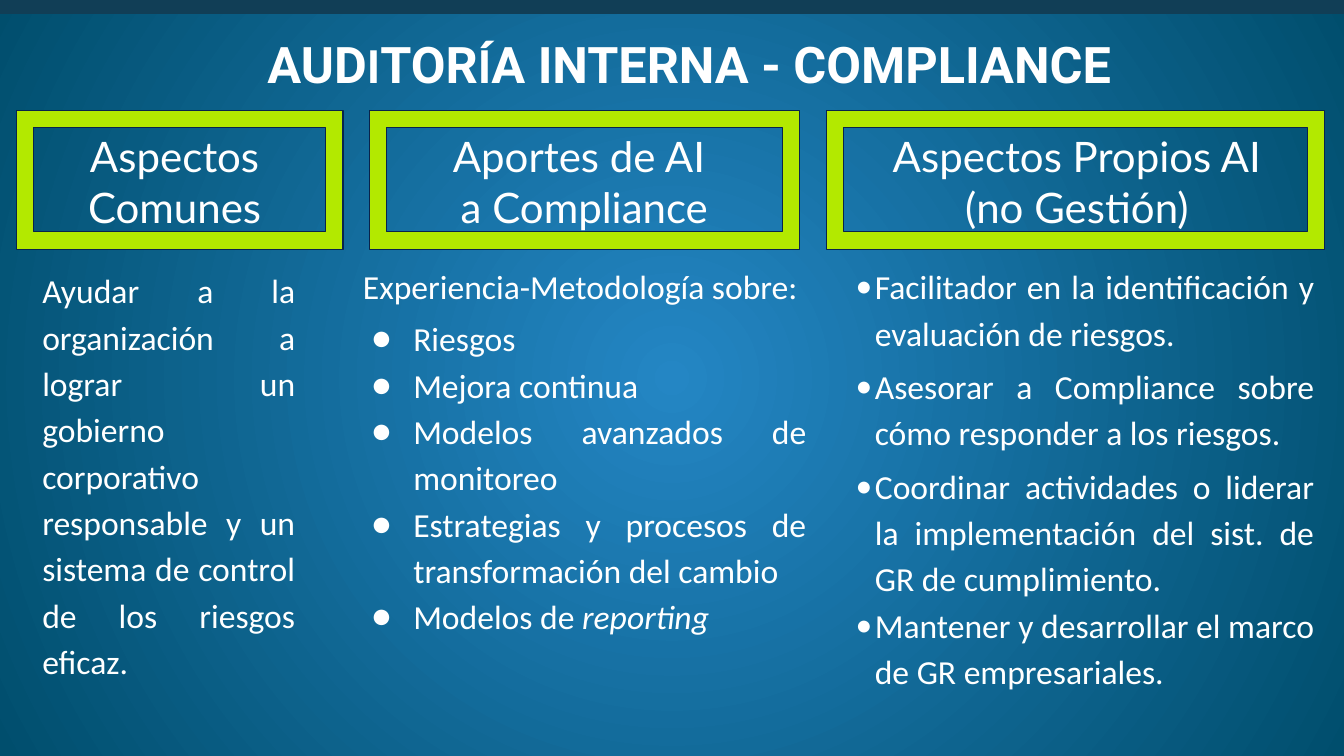
from dataclasses import dataclass
from lxml import etree
from pptx import Presentation
from pptx.dml.color import RGBColor as RGB
from pptx.enum import shapes, text
from pptx.oxml.ns import qn
from pptx.util import Pt


@dataclass(frozen=True)
class Theme:
    white: str = "FFFFFF"
    lime: str = "B3E900"
    navy: str = "09244C"
    band: str = "113E56"
    glow: str = "2486C4"
    edge: str = "004E6D"
    title: int = 36
    head: int = 30
    body: int = 24


T = Theme()
MID = text.PP_ALIGN.CENTER
FULL = text.PP_ALIGN.JUSTIFY
TOP = text.MSO_ANCHOR.TOP


def put(shape, x, y, w, h):
    shape.left, shape.top, shape.width, shape.height = map(Pt, (x, y, w, h))
    return shape


def mark(para, char, left, hang):
    """Set the indent of a paragraph and its bullet, or none if char is empty."""
    props = para._p.get_or_add_pPr()
    props.set("marL", str(Pt(left)))
    props.set("indent", str(Pt(-hang)))
    if not char:
        etree.SubElement(props, qn("a:buNone"))
        return
    color = etree.SubElement(props, qn("a:buClr"))
    etree.SubElement(color, qn("a:srgbClr"), val=T.white)
    etree.SubElement(props, qn("a:buFont"), typeface="Calibri")
    etree.SubElement(props, qn("a:buChar"), char=char)


def write(shape, paras, size, font="Calibri", align=FULL, anchor=TOP,
          inset=7.2, bold=False, line=1.0):
    """Fill a shape; each paragraph is (runs, space before, bullet, left, hang)."""
    frame = shape.text_frame
    frame.word_wrap = True
    frame.auto_size = text.MSO_AUTO_SIZE.NONE
    frame.vertical_anchor = anchor
    frame.margin_left = frame.margin_right = Pt(inset)
    frame.margin_top = frame.margin_bottom = Pt(inset)
    for i, (runs, before, *bullet) in enumerate(paras):
        para = frame.add_paragraph() if i else frame.paragraphs[0]
        para.alignment, para.line_spacing = align, line
        para.space_before, para.space_after = Pt(before), Pt(0)
        mark(para, *(bullet or ("", 0, 0)))
        for words, extra in runs:
            run = para.add_run()
            run.text = words
            style = run.font
            style.size, style.name, style.bold = Pt(size), font, bold
            style.color.rgb = RGB.from_string(T.white)
            for key, value in extra.items():
                setattr(style, key, value)


def plain(words):
    return [(words, {})]


def block(slide, kind, box, fill, line=None):
    shape = put(slide.shapes.add_shape(kind, 0, 0, 0, 0), *box)
    shape.shadow.inherit = False
    shape.fill.solid()
    shape.fill.fore_color.rgb = RGB.from_string(fill)
    if line:
        shape.line.color.rgb = RGB.from_string(line)
        shape.line.width = Pt(0.75)
    else:
        shape.line.fill.background()
    return shape


def paint(slide):
    """Give the slide its round gradient."""
    fill = slide.background.fill
    fill.gradient()
    for stop, color in zip(fill.gradient_stops, (T.glow, T.edge)):
        stop.color.rgb = RGB.from_string(color)
    grad = slide.element.find(".//" + qn("a:gradFill"))
    grad.remove(grad.find(qn("a:lin")))
    way = etree.SubElement(grad, qn("a:path"), path="circle")
    etree.SubElement(way, qn("a:fillToRect"), l="50000", t="50000",
                     r="50000", b="50000")


def header(slide, x, y, w):
    block(slide, shapes.MSO_SHAPE.RECTANGLE, (x, y, w, 10), T.band)
    title = put(slide.shapes.title, x + 109.5, y + 23.8, 766, 40.3)
    sans = {"name": "Calibri"}
    runs = [("AUD", {}), ("I", sans), ("TOR", {}), ("Í", sans),
            ("A INTERNA - COMPLIANCE", {})]
    write(title, [(runs, 0)], T.title, "Roboto", MID, inset=0, bold=True)


def label(slide, x, y, w, h, paras, shift=0):
    """Draw a framed heading; shift moves its text sideways."""
    note = slide.shapes.add_textbox(0, 0, 0, 0)
    put(note, x + 15 + shift, y + 15, w - 30, h - 28)
    write(note, paras, T.head, "Lato", MID, text.MSO_ANCHOR.MIDDLE)
    block(slide, shapes.MSO_SHAPE.FRAME, (x, y, w, h), T.lime, T.navy)


def column(slide, slot, x, y, w, h, paras):
    body = put(slide.placeholders[slot], x, y, w, h)
    write(body, paras, T.body, line=1.15)


def main():
    deck = Presentation()
    deck.slide_width, deck.slide_height = Pt(960), Pt(540)
    slide = deck.slides.add_slide(deck.slide_layouts[4])
    spare = slide.placeholders[3].element
    spare.getparent().remove(spare)
    paint(slide)
    header(slide, 0, 0, 960)

    top, tall = 78.7, 99.4
    label(slide, 11.5, top, 233.5, tall, [(plain("Aspectos Comunes"), 0)], -3.5)
    label(slide, 263.7, top, 307.5, tall,
          [(plain("Aportes de AI "), 0), (plain("a Compliance"), 0)])
    own = [("Aspectos Propios AI (", {}), ("no ", {"underline": True}),
           ("Gestión)", {})]
    label(slide, 590.4, top, 355.7, tall, [(own, 0)], 1)

    column(slide, 1, 23, 181.4, 195.1, 258.5, [(plain(
        "Ayudar a la organización a lograr un gobierno corporativo "
        "responsable y un sistema de control de los riesgos eficaz."), 5)])

    dot = ("●", 36, 30)
    skills = ["Mejora continua", "Modelos avanzados de monitoreo",
              "Estrategias y procesos de transformación del cambio"]
    column(slide, 2, 252, 178.6, 331.2, 193, [
        (plain("Experiencia-Metodología sobre:"), 5),
        (plain("Riesgos"), 4, *dot),
        *((plain(skill), 0, *dot) for skill in skills),
        ([("Modelos de ", {}), ("reporting", {"italic": True})], 0, *dot)])

    tasks = [
        ("Facilitador en la identificación y evaluación de riesgos.", 5),
        ("Asesorar a Compliance sobre cómo responder a los riesgos.", 5),
        ("Coordinar actividades o liderar la implementación del sist. de GR "
         "de cumplimiento.", 5),
        ("Mantener y desarrollar el marco de GR empresariales.", 0)]
    column(slide, 4, 604, 178.6, 342, 178.6,
           [(plain(task), gap, "•", 13.7, 20.9) for task, gap in tasks])
    deck.save("out.pptx")


if __name__ == "__main__":
    main()
